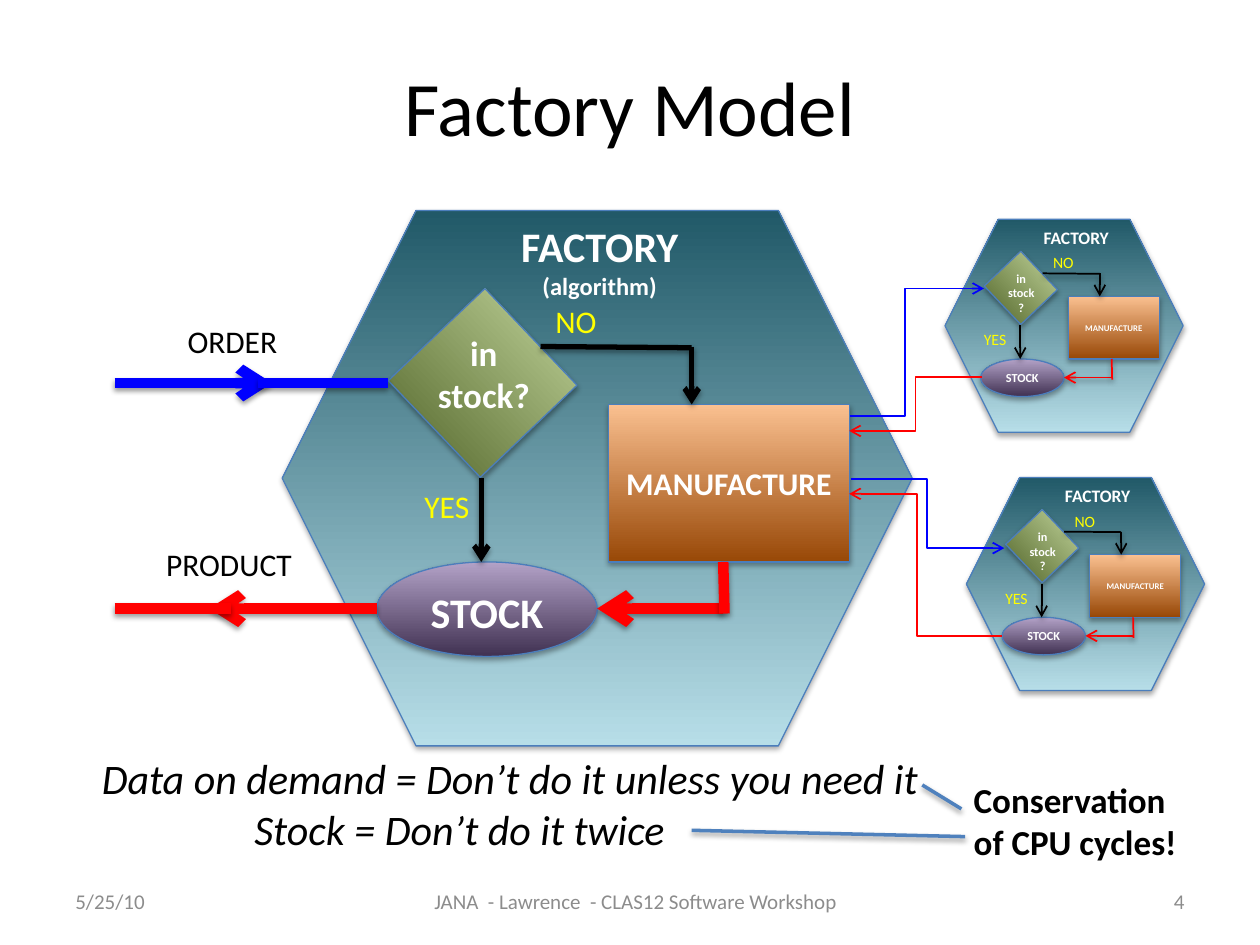
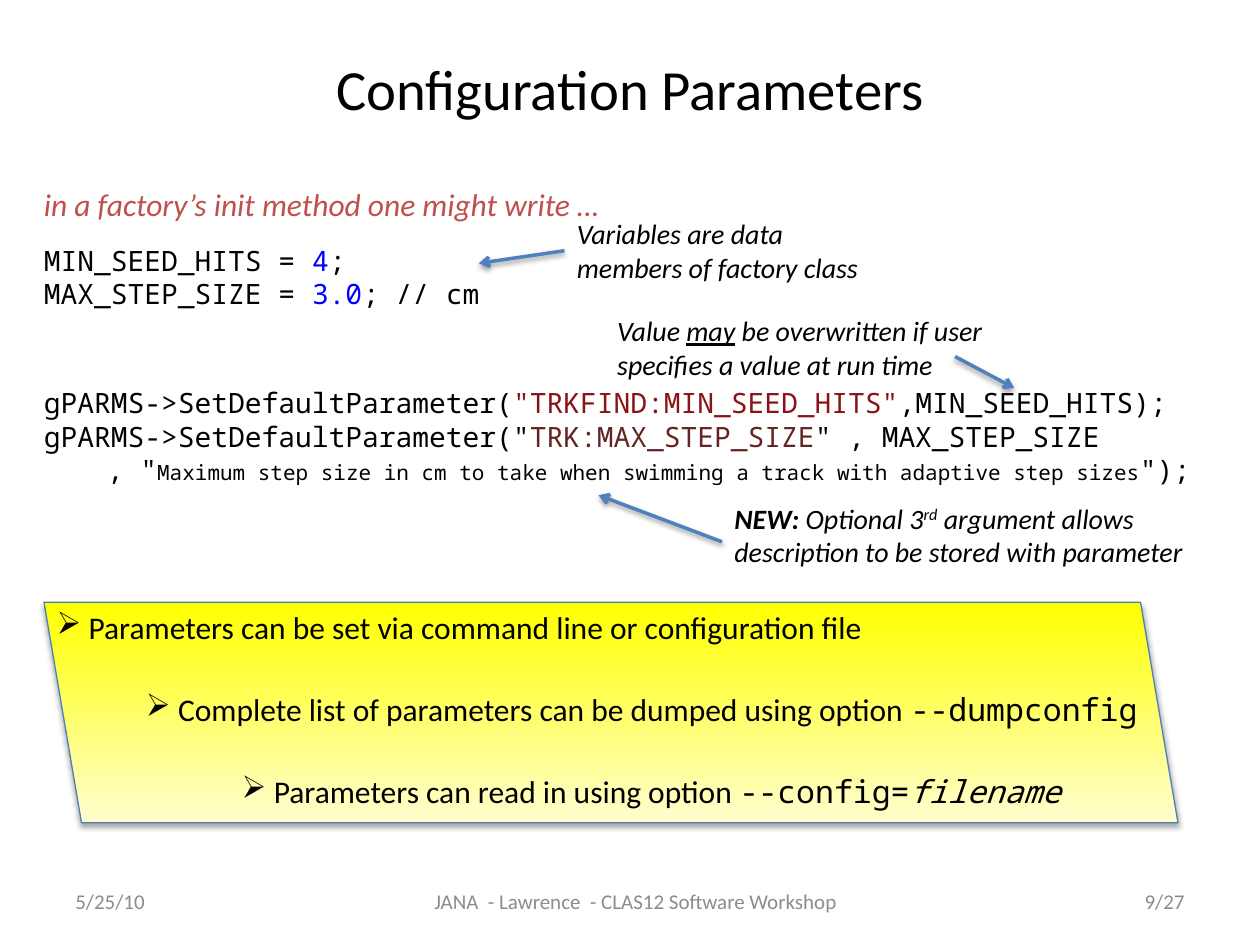
"""Builds two slides: the factory model and its configuration parameters."""
from lxml import etree
from pptx import Presentation
from pptx.dml.color import RGBColor
from pptx.enum.shapes import MSO_CONNECTOR, MSO_SHAPE
from pptx.enum.text import MSO_ANCHOR, PP_ALIGN
from pptx.oxml.ns import qn
from pptx.util import Inches, Pt

HEX, OVAL = MSO_SHAPE.HEXAGON, MSO_SHAPE.OVAL
RECT, SLANT = MSO_SHAPE.RECTANGLE, MSO_SHAPE.PARALLELOGRAM
LINE, BENT = MSO_CONNECTOR.STRAIGHT, MSO_CONNECTOR.ELBOW
LEFT, MID, RIGHT = PP_ALIGN.LEFT, PP_ALIGN.CENTER, PP_ALIGN.RIGHT
TOP, HALF, LOW = MSO_ANCHOR.TOP, MSO_ANCHOR.MIDDLE, MSO_ANCHOR.BOTTOM

BLACK = RGBColor(0x00, 0x00, 0x00)
WHITE = RGBColor(0xFF, 0xFF, 0xFF)
GREY = RGBColor(0x8C, 0x8C, 0x8C)
RED = RGBColor(0xFF, 0x00, 0x00)
BLUE = RGBColor(0x00, 0x00, 0xFF)
YELLOW = RGBColor(0xFF, 0xFF, 0x00)
CREAM = RGBColor(0xFF, 0xFE, 0xCF)
EDGE = RGBColor(0x4B, 0x7E, 0xBC)
STEEL = RGBColor(0x4F, 0x81, 0xBD)
BRICK = RGBColor(0xC0, 0x50, 0x4D)
WINE = RGBColor(0x89, 0x13, 0x15)
BROWN = RGBColor(0x63, 0x25, 0x23)
TEAL = RGBColor(0x21, 0x59, 0x68)
SKY = RGBColor(0xB7, 0xDE, 0xE8)
PLUM = RGBColor(0x40, 0x31, 0x52)
LILAC = RGBColor(0xB3, 0xA2, 0xC7)
MOSS = RGBColor(0x4F, 0x62, 0x28)
SAGE = RGBColor(0xC3, 0xD6, 0x9B)
RUST = RGBColor(0x98, 0x48, 0x07)
PEACH = RGBColor(0xFA, 0xC0, 0x90)
SANS, MONO = "Calibri", "Noto Sans Mono"


def write(frame, rows, size, colour, look="", align=LEFT, anchor=TOP, wrap=False, font=SANS):
    """Fill a frame with rows of runs; a run is a string or (string, changes)."""
    frame.word_wrap = wrap
    frame.vertical_anchor = anchor
    for num, row in enumerate(rows):
        para = frame.add_paragraph() if num else frame.paragraphs[0]
        para.alignment = align
        for part in [row] if isinstance(row, str) else row:
            text, changes = (part, {}) if isinstance(part, str) else part
            run = para.add_run()
            run.text = text
            run.font.name = font
            run.font.size = Pt(size)
            run.font.bold = "b" in look
            run.font.italic = "i" in look
            run.font.color.rgb = changes.get("colour", colour)
            for key in changes.keys() - {"colour"}:
                setattr(run.font, key, changes[key])


def shade(item, alpha):
    """Give a shape or connector a soft shadow below, or none if alpha is 0."""
    effects = etree.SubElement(item._element.spPr, qn("a:effectLst"))
    if alpha:
        outer = etree.SubElement(effects, qn("a:outerShdw"), blurRad=str(Pt(3.1)),
                                 dist=str(Pt(1.7)), dir="5400000", rotWithShape="0")
        black = etree.SubElement(outer, qn("a:srgbClr"), val="000000")
        etree.SubElement(black, qn("a:alpha"), val=str(alpha * 1000))


deck = Presentation()
deck.slide_width, deck.slide_height = Inches(10), Inches(7.5)
heads = [
    ("Factory Model", 44, 0.3, 1.08, "4"),
    ("Configuration Parameters", 32.4, 0.35, 0.7, "9/27"),
]
slides, notes = [], []
for head, size, top, tall, page in heads:
    slide = deck.slides.add_slide(deck.slide_layouts[5])
    slides.append(slide)
    title = slide.shapes.title
    title.left, title.top = Inches(0.5), Inches(top)
    title.width, title.height = Inches(9), Inches(tall)
    write(title.text_frame, [head], size, BLACK, align=MID, anchor=HALF, wrap=True)
    feet = [
        (0.5, 2.33, "5/25/10", LEFT),
        (2.92, 4.25, "JANA  - Lawrence  - CLAS12 Software Workshop", MID),
        (7.17, 2.33, page, RIGHT),
    ]
    for left, wide, text, align in feet:
        notes.append((slide, (left, 6.95, wide, 0.4), [text], 12, GREY, "", align, HALF, True))
model, setup = slides

BIG = (2.24, 1.67, 5, 4.25)
plants = [
    (BIG, 24, 18, 20, 18, 3, 6, (1.03, 2.15, 0.56, 0.4), (2.07, 0.68, 0.53, 0.4), (1.46, 0.74)),
    ((7.5, 1.74, 1.89, 1.69), 7, 5, 7, 9, 1, 1,
     (0.21, 0.83, 0.38, 0.25), (0.76, 0.22, 0.37, 0.25), (0.73, 0.27)),
]
plants.append(((7.67, 3.79, 1.89, 1.69),) + plants[1][1:])
parts = [
    (HEX, 2.24, 1.67, 5, 4.25, SKY, TEAL, 0, "", LOW),
    (OVAL, 2.99, 4.46, 1.75, 0.75, PLUM, LILAC, 0, "STOCK", LOW),
    (RECT, 3.3, 2.51, 1.06, 1.06, MOSS, SAGE, 46.4, "", LOW),
    (RECT, 4.83, 3.21, 1.91, 1.25, RUST, PEACH, 0, "MANUFACTURE", HALF),
]
paths = [
    (BLACK, False, 5.49, 2.76, 4.29, 2.75),
    (BLACK, True, 5.49, 2.75, 5.49, 3.21),
    (BLACK, True, 3.82, 3.79, 3.82, 4.46),
    (RED, True, 5.74, 4.83, 4.74, 4.83),
    (RED, False, 5.74, 4.46, 5.75, 4.87),
]
forms, lines = [], []
for box, stock, make, ask, answer, thin, thick, yes, no, name in plants:
    left, top = box[:2]
    across, down = box[2] / BIG[2], box[3] / BIG[3]
    for kind, x, y, w, h, low, high, turn, label, anchor in parts:
        wide, tall = w * across, h * down
        midx = left + (x + w / 2 - BIG[0]) * across
        midy = top + (y + h / 2 - BIG[1]) * down
        if turn:
            wide, tall = w * down, h * across
        place = (midx - wide / 2, midy - tall / 2, wide, tall)
        size = stock if kind == OVAL else make
        forms.append((model, kind, place, low, high, turn, label, size, anchor))
    for colour, tip, *ends in paths:
        x1, x2 = [left + (x - BIG[0]) * across for x in ends[::2]]
        y1, y2 = [top + (y - BIG[1]) * down for y in ends[1::2]]
        width = thick if colour == RED else thin
        lines.append((model, colour, width, tip, (x1, y1, x2, y2), None))
    sign = ["FACTORY"]
    if box == BIG:
        sign.append([("(algorithm)", {"size": Pt(14)})])
    query = (left + 1.06 * across, top + 0.91 * down, 1.08 * across, 0.77 if box == BIG else 0.45)
    plate = (left + 1.79 * across, top + 0.03 * down, *name)
    notes += [
        (model, query, ["in stock?"], ask, WHITE, "b", MID, TOP, True),
        (model, plate, sign, stock if box == BIG else 10, WHITE, "b", MID),
    ]
    for text, (x, y, w, h) in (("YES", yes), ("NO", no)):
        notes.append((model, (left + x, top + y, w, h), [text], answer, YELLOW))
forms.append((setup, SLANT, (0.35, 4.78, 9, 1.75), CREAM, YELLOW, 0, "", 18, TOP))

lines += [
    (model, BLUE, 6, True, (0.91, 3.04, 2.16, 3.04), None),
    (model, BLUE, 6, False, (2.05, 3.04, 3.08, 3.04), None),
    (model, RED, 6, True, (2.99, 4.83, 1.66, 4.83), None),
    (model, RED, 6, False, (0.91, 4.83, 1.83, 4.83), None),
    (model, RED, 1, True, (7.79, 2.99, 6.74, 3.42), 50),
    (model, BLUE, 1, True, (6.75, 3.3, 7.81, 2.29), 40.9),
    (model, RED, 1, True, (7.95, 5.05, 6.74, 3.92), 55.5),
    (model, BLUE, 1, True, (6.75, 3.8, 7.97, 4.35), 50),
    (model, STEEL, 2, False, (7.32, 6.23, 7.63, 6.42), None),
    (model, STEEL, 2, False, (5.49, 6.59, 7.66, 6.64), None),
    (setup, STEEL, 2, True, (4.48, 1.99, 3.8, 2.09), None),
    (setup, STEEL, 2, True, (7.58, 2.83, 8.05, 3.08), None),
    (setup, STEEL, 2, True, (5.73, 4.3, 4.75, 3.93), None),
]

for slide, kind, place, low, high, turn, label, size, anchor in forms:
    shape = slide.shapes.add_shape(kind, *map(Inches, place))
    shape.rotation = turn
    shape.fill.gradient()
    shape.fill.gradient_angle = 90
    for stop, colour in zip(shape.fill.gradient_stops, (low, high)):
        stop.color.rgb = colour
    shape.line.color.rgb = EDGE
    shape.line.width = Pt(0.75)
    shade(shape, 35)
    if kind == SLANT:
        shape.adjustments[0] = 0.17
        shape._element.spPr.find(qn("a:xfrm")).set("flipH", "1")
    if label:
        write(shape.text_frame, [label], size, WHITE, "b", MID, anchor)

for slide, colour, width, tip, ends, bend in lines:
    line = slide.shapes.add_connector(BENT if bend else LINE, *map(Inches, ends))
    line.line.color.rgb = colour
    line.line.width = Pt(width)
    props = line._element.spPr
    if tip:
        etree.SubElement(props.find(qn("a:ln")), qn("a:tailEnd"), type="arrow")
    if bend:
        guides = props.find(qn("a:prstGeom")).get_or_add_avLst()
        etree.SubElement(guides, qn("a:gd"), name="adj1", fmla=f"val {round(bend * 1000)}")
    shade(line, 0 if bend else 38)

notes += [
    (model, (1.39, 2.51, 0.93, 0.4), ["ORDER"], 18, BLACK),
    (model, (1.22, 4.28, 1.21, 0.4), ["PRODUCT"], 18, BLACK),
    (model, (0.71, 5.92, 6.79, 0.5), ["Data on demand = Don’t do it unless you need it"],
     24, BLACK, "i"),
    (model, (1.92, 6.33, 3.57, 0.5), ["Stock = Don’t do it twice"], 24, BLACK, "i"),
    (model, (7.63, 6.13, 1.87, 0.77), ["Conservation of CPU cycles!"],
     20, BLACK, "b", LEFT, TOP, True),
    (setup, (0.25, 1.42, 6.57, 0.5), ["in a factory’s init method one might write …"],
     18, BRICK, "i"),
    (setup, (4.48, 1.67, 2.49, 0.64), ["Variables are data members of factory class"],
     16, BLACK, "i", LEFT, TOP, True),
    (setup, (4.8, 2.44, 3.25, 0.64),
     [["Value ", ("may", {"underline": True}),
       " be overwritten if user specifies a value at run time"]],
     16, BLACK, "i", LEFT, TOP, True),
]
for slide, place, *rest in notes:
    write(slide.shapes.add_textbox(*map(Inches, place)).text_frame, *rest)

extra = setup.shapes.add_textbox(*map(Inches, (5.73, 3.93, 3.92, 0.64))).text_frame
write(extra, [[("NEW: ", {"bold": True}), "Optional 3", "rd",
               " argument allows description to be stored with parameter"]],
      16, BLACK, "i", wrap=True)
extra.paragraphs[0].runs[2].font._element.set("baseline", "30000")

code = setup.shapes.add_textbox(*map(Inches, (0.25, 1.88, 9.39, 2.05))).text_frame
rows = [
    ["MIN_SEED_HITS = ", ("4", {"colour": BLUE}), ";"],
    ["MAX_STEP_SIZE = ", ("3.0", {"colour": BLUE}), "; // cm"],
    ["gPARMS->SetDefaultParameter(", ("\"TRKFIND:MIN_SEED_HITS\"", {"colour": WINE}),
     ",MIN_SEED_HITS);"],
    ["gPARMS->SetDefaultParameter(\"", ("TRK:MAX_STEP_SIZE", {"colour": BROWN}),
     "\" , MAX_STEP_SIZE"],
    [", \"", ("Maximum step size in cm to take when swimming a track with adaptive step sizes",
              {"size": Pt(12)}), "\");"],
]
write(code, rows, 16, BLACK, font=MONO)
code.paragraphs[2].space_before = Pt(43)
code.paragraphs[4]._p.get_or_add_pPr().set("marL", str(Inches(0.5)))

points = [
    (0.35, 6.92, [" Parameters can be set via command line or configuration file"]),
    (1.06, 8.29, [" Complete list of parameters can be dumped using option ",
                  ("--dumpconfig", {"name": MONO})]),
    (1.82, 6.77, [" Parameters can read in using option ", ("--config=", {"name": MONO}),
                  ("filename", {"name": MONO, "italic": True})]),
]
for num, (left, wide, row) in enumerate(points):
    place = (left, 4.78 + 0.65 * num, wide, 0.4)
    frame = setup.shapes.add_textbox(*map(Inches, place)).text_frame
    write(frame, [row], 18, BLACK, wrap=True)
    etree.SubElement(frame.paragraphs[0]._p.get_or_add_pPr(), qn("a:buChar"), char="➢")

deck.save("out.pptx")
